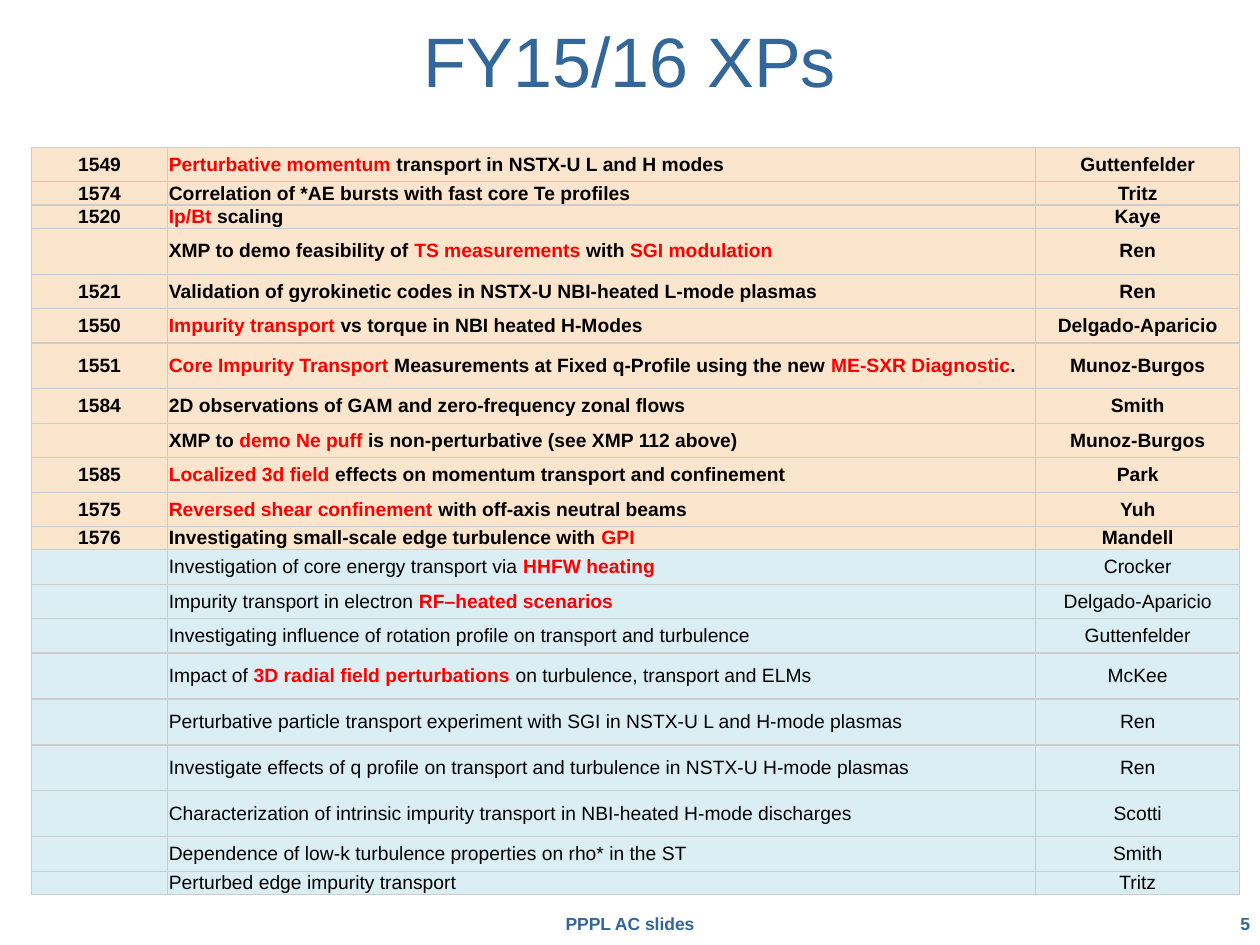
from dataclasses import dataclass
from typing import NamedTuple

from lxml import etree
from pptx import Presentation
from pptx import util as u
from pptx.dml import color
from pptx.enum import text
from pptx.oxml import ns


@dataclass(frozen=True)
class Theme:
    font: str = "Arial"
    blue: str = "336699"
    ink: str = "000000"
    red: str = "FF0000"
    warm: str = "FCE5CD"
    cool: str = "DBEEF4"
    rule: str = "CCCCCC"
    head: float = 40
    body: float = 11
    foot: float = 10
    line: float = 0.75


class Box(NamedTuple):
    left: float
    top: float
    wide: float
    high: float


class Label(NamedTuple):
    words: str
    box: Box
    size: float
    bold: bool
    align: text.PP_ALIGN
    side: float
    anchor: text.MSO_ANCHOR
    space: float


class Plan(NamedTuple):
    code: str
    topic: str
    lead: str
    units: int
    firm: bool = True


LOOK = Theme()
WIDE, HIGH = u.Inches(10), u.Inches(7.5)
LEFT, MID, RIGHT = text.PP_ALIGN.LEFT, text.PP_ALIGN.CENTER, text.PP_ALIGN.RIGHT
TOP, HALF = text.MSO_ANCHOR.TOP, text.MSO_ANCHOR.MIDDLE
COLS = (0.108, 0.689, 0.162)
GRID = Box(0.025, 0.156, sum(COLS), 0.79)

LABELS = (
    Label("5", Box(0.925, 0.96, 0.067, 0.036), LOOK.foot, True, RIGHT, 0, TOP, 1),
    Label("PPPL AC slides", Box(0.1, 0.96, 0.8, 0.036), LOOK.foot, True, MID, 0, TOP, 1),
    Label("FY15/16 XPs", Box(0, 0, 1, 0.14), LOOK.head, False, MID, 0.05, HALF, 0.85),
)

PLANS = (
    Plan("1549", "|Perturbative momentum| transport in NSTX-U L and H modes", "Guttenfelder", 3),
    Plan("1574", "Correlation of *AE bursts with fast core Te profiles", "Tritz", 2),
    Plan("1520", "|Ip/Bt| scaling", "Kaye", 2),
    Plan("", "XMP to demo feasibility of |TS measurements |with |SGI modulation|", "Ren", 4),
    Plan("1521", "Validation of gyrokinetic codes in NSTX-U NBI-heated L-mode plasmas", "Ren", 3),
    Plan("1550", "|Impurity transport |vs torque in NBI heated H-Modes", "Delgado-Aparicio", 3),
    Plan("1551", "|Core Impurity Transport |Measurements at Fixed q-Profile using the new "
         "|ME-SXR Diagnostic|.", "Munoz-Burgos", 4),
    Plan("1584", "2D observations of GAM and zero-frequency zonal flows", "Smith", 3),
    Plan("", "XMP to |demo Ne puff |is non-perturbative (see XMP 112 above)", "Munoz-Burgos", 3),
    Plan("1585", "|Localized 3d field |effects on momentum transport and confinement", "Park", 3),
    Plan("1575", "|Reversed shear confinement |with off-axis neutral beams", "Yuh", 3),
    Plan("1576", "Investigating small-scale edge turbulence with |GPI|", "Mandell", 2),
    Plan("", "Investigation of core energy transport via |HHFW heating|", "Crocker", 3, False),
    Plan("", "Impurity transport in electron |RF–heated scenarios|", "Delgado-Aparicio", 3, False),
    Plan("", "Investigating influence of rotation profile on transport and turbulence",
         "Guttenfelder", 3, False),
    Plan("", "Impact of |3D radial field perturbations |on turbulence, transport and ELMs",
         "McKee", 4, False),
    Plan("", "Perturbative particle transport experiment with SGI in NSTX-U L and H-mode plasmas",
         "Ren", 4, False),
    Plan("", "Investigate effects of q profile on transport and turbulence in NSTX-U H-mode plasmas",
         "Ren", 4, False),
    Plan("", "Characterization of intrinsic impurity transport in NBI-heated H-mode discharges",
         "Scotti", 4, False),
    Plan("", "Dependence of low-k turbulence properties on rho* in the ST", "Smith", 3, False),
    Plan("", "Perturbed edge impurity transport", "Tritz", 2, False),
)


def assign(thing, values: dict) -> None:
    for name, value in values.items():
        setattr(thing, name, value)


def place(box: Box) -> tuple:
    return tuple(round(part * full) for part, full in zip(box, (WIDE, HIGH, WIDE, HIGH)))


def pads(side: float, ends: float) -> dict:
    return {"margin_left": u.Inches(side), "margin_right": u.Inches(side),
            "margin_top": u.Inches(ends), "margin_bottom": u.Inches(ends)}


def write(para, words: str, size: float, bold: bool, tint: str) -> None:
    run = para.add_run()
    run.text = words
    assign(run.font, {"name": LOOK.font, "size": u.Pt(size), "bold": bold})
    run.font.color.rgb = color.RGBColor.from_string(tint)


def draw_label(slide, label: Label) -> None:
    frame = slide.shapes.add_textbox(*place(label.box)).text_frame
    assign(frame, {"word_wrap": True, "vertical_anchor": label.anchor,
                   **pads(label.side, 0.05)})
    para = frame.paragraphs[0]
    assign(para, {"alignment": label.align, "line_spacing": label.space})
    write(para, label.words, label.size, label.bold, LOOK.blue)


def rule_cell(cell) -> None:
    props = cell._tc.get_or_add_tcPr()
    for edge in "LRTB":
        line = etree.SubElement(props, ns.qn(f"a:ln{edge}"), w=str(u.Pt(LOOK.line)))
        fill = etree.SubElement(line, ns.qn("a:solidFill"))
        etree.SubElement(fill, ns.qn("a:srgbClr"), val=LOOK.rule)


def size_blank(para) -> None:
    mark = etree.SubElement(para._p, ns.qn("a:endParaRPr"), sz=str(LOOK.body * 100))
    etree.SubElement(mark, ns.qn("a:latin"), typeface=LOOK.font)


def draw_cell(cell, words: str, align: text.PP_ALIGN, firm: bool) -> None:
    assign(cell, {"vertical_anchor": HALF, **pads(0.01, 0)})
    rule_cell(cell)
    cell.fill.solid()
    cell.fill.fore_color.rgb = color.RGBColor.from_string(LOOK.warm if firm else LOOK.cool)
    para = cell.text_frame.paragraphs[0]
    para.alignment = align
    if not words:
        size_blank(para)
    for turn, part in enumerate(words.split("|")):
        hot = turn % 2 == 1
        if part:
            write(para, part, LOOK.body, firm or hot, LOOK.red if hot else LOOK.ink)


def draw_table(slide, plans: tuple) -> None:
    table = slide.shapes.add_table(len(plans), len(COLS), *place(GRID)).table
    assign(table, {"first_row": False, "horz_banding": False})
    for col, share in zip(table.columns, COLS):
        col.width = round(share * WIDE)
    unit = GRID.high * HIGH / sum(plan.units for plan in plans)
    for row, plan in zip(table.rows, plans):
        row.height = round(plan.units * unit)
        for cell, words, align in zip(row.cells, plan[:3], (MID, LEFT, MID)):
            draw_cell(cell, words, align, plan.firm)


def main() -> None:
    deck = Presentation()
    assign(deck, {"slide_width": WIDE, "slide_height": HIGH})
    slide = deck.slides.add_slide(deck.slide_layouts[6])
    for label in LABELS:
        draw_label(slide, label)
    draw_table(slide, PLANS)
    deck.save("out.pptx")


if __name__ == "__main__":
    main()
